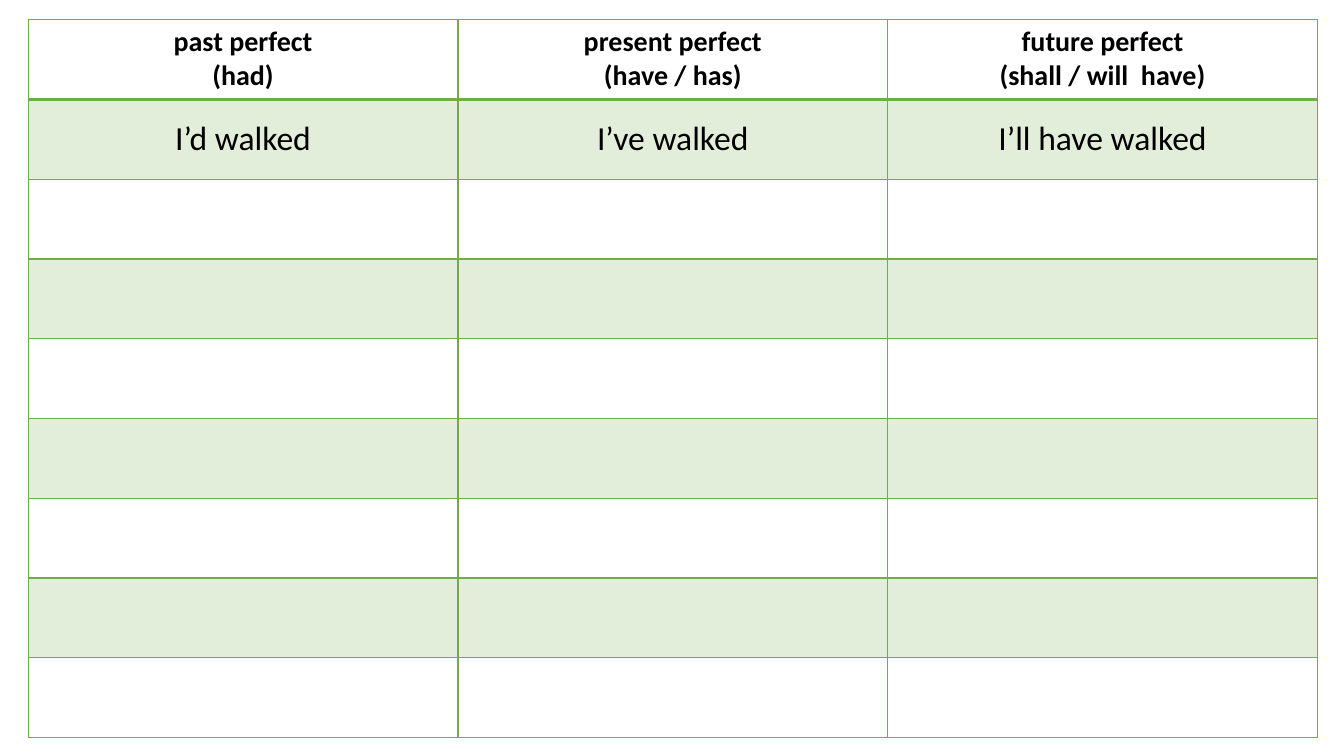
from lxml.etree import SubElement
from pptx import Presentation
from pptx.dml.color import RGBColor
from pptx.enum.text import MSO_ANCHOR as Anchor, PP_ALIGN as Align
from pptx.oxml.ns import qn
from pptx.util import Cm, Pt

GREEN = "70AD47"
BLACK = "000000"
ROWS = 9
COLUMN_WIDTH = Cm(10.83)
ROW_HEIGHT = Cm(2.01)

tenses = [
    ("past perfect\n(had)", "I’d walked"),
    ("present perfect\n(have / has)", "I’ve walked"),
    ("future perfect\n(shall / will  have)", "I’ll have walked"),
]


def paint(fill, color, opacity=100):
    fill.solid()
    fill.fore_color.rgb = RGBColor.from_string(color)
    if opacity < 100:
        tint = fill._xPr.find(qn("a:solidFill"))[0]
        SubElement(tint, qn("a:alpha"), val=str(opacity * 1000))


def write(cell, text, size, bold=False, anchor=Anchor.TOP):
    cell.vertical_anchor = anchor
    cell.text_frame.text = text
    for para in cell.text_frame.paragraphs:
        para.alignment = Align.CENTER
        for span in para.runs:
            span.font.name = "Calibri"
            span.font.size = Pt(size)
            span.font.bold = bold
            paint(span.font.fill, BLACK)


deck = Presentation()
deck.slide_width = Cm(33.87)
deck.slide_height = Cm(19.05)
page = deck.slides.add_slide(deck.slide_layouts[6])

frame = page.shapes.add_table(
    ROWS, len(tenses), Cm(0.71), Cm(0.5),
    COLUMN_WIDTH * len(tenses), ROW_HEIGHT * ROWS,
)
grid = frame.table
grid.first_row = False
grid.horz_banding = False
for column in grid.columns:
    column.width = COLUMN_WIDTH

for number, row in enumerate(grid.rows):
    row.height = ROW_HEIGHT
    for cell in row.cells:
        properties = cell._tc.get_or_add_tcPr()
        for side in ("lnL", "lnR", "lnT", "lnB"):
            heavy = (number, side) in ((0, "lnB"), (1, "lnT"))
            line = SubElement(properties, qn(f"a:{side}"), w=str(Pt(2 if heavy else 1)))
            ink = SubElement(line, qn("a:solidFill"))
            SubElement(ink, qn("a:srgbClr"), val=GREEN)
        if number % 2:
            paint(cell.fill, GREEN, opacity=20)
        else:
            cell.fill.background()

for column, (heading, example) in enumerate(tenses):
    write(grid.cell(0, column), heading, size=20, bold=True)
    write(grid.cell(1, column), example, size=24, anchor=Anchor.MIDDLE)

deck.save("out.pptx")
